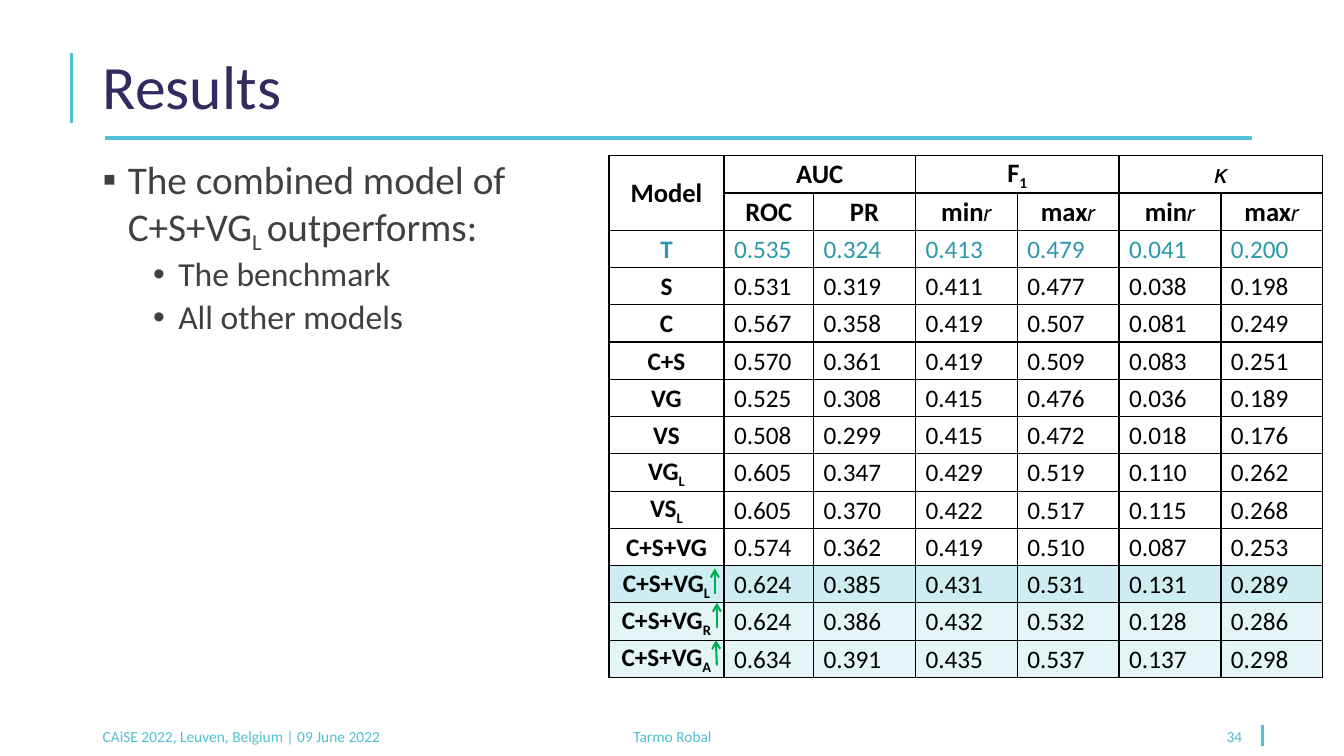
from pptx import Presentation
from pptx.dml.color import RGBColor
from pptx.enum.shapes import MSO_CONNECTOR
from pptx.enum.text import MSO_ANCHOR, PP_ALIGN
from pptx.oxml.ns import qn
from pptx.util import Pt
from lxml.etree import SubElement

PX = 9144  # 100 px to the inch
FONT = "Calibri"
BLACK = RGBColor(0x00, 0x00, 0x00)
GREY = RGBColor(0x40, 0x40, 0x40)
NAVY = RGBColor(0x33, 0x2B, 0x60)
AQUA = RGBColor(0x4F, 0xBF, 0xD3)
TEAL = RGBColor(0x2B, 0x99, 0xAB)
GREEN = RGBColor(0x00, 0xB0, 0x50)

LEFT, MID, RIGHT = PP_ALIGN.LEFT, PP_ALIGN.CENTER, PP_ALIGN.RIGHT
WIDTHS = [114, 89] + [101] * 5
ROW = 37
GROUPS = ["AUC", "F_1", "𝜅"]
HEADS = ["ROC", "PR"] + ["min", "max"] * 2
SCORES = [
    ("T", "0.535 0.324 0.413 0.479 0.041 0.200"),
    ("S", "0.531 0.319 0.411 0.477 0.038 0.198"),
    ("C", "0.567 0.358 0.419 0.507 0.081 0.249"),
    ("C+S", "0.570 0.361 0.419 0.509 0.083 0.251"),
    ("VG", "0.525 0.308 0.415 0.476 0.036 0.189"),
    ("VS", "0.508 0.299 0.415 0.472 0.018 0.176"),
    ("VG_L", "0.605 0.347 0.429 0.519 0.110 0.262"),
    ("VS_L", "0.605 0.370 0.422 0.517 0.115 0.268"),
    ("C+S+VG", "0.574 0.362 0.419 0.510 0.087 0.253"),
    ("C+S+VG_L", "0.624 0.385 0.431 0.531 0.131 0.289"),
    ("C+S+VG_R", "0.624 0.386 0.432 0.532 0.128 0.286"),
    ("C+S+VG_A", "0.634 0.391 0.435 0.537 0.137 0.298"),
]
TINTS = {"C+S+VG_L": 28, "C+S+VG_R": 15, "C+S+VG_A": 15}


def write(par, text, size, color=BLACK, bold=False, align=LEFT, lead=None, before=0):
    """Add text to a paragraph; underscores switch subscript on and off."""
    par.alignment = align
    par.space_before = Pt(before)
    if lead:
        par.line_spacing = lead
    for i, part in enumerate(text.split("_")):
        run = par.add_run()
        run.text = part
        font = run.font
        font.name, font.size, font.bold = FONT, Pt(size), bold
        font.color.rgb = color
        if i % 2:
            run._r.get_or_add_rPr().set("baseline", "-25000")


def line(slide, x1, y1, x2, y2, color=AQUA, width=2.25, arrow=False):
    rule = slide.shapes.add_connector(
        MSO_CONNECTOR.STRAIGHT, *(v * PX for v in (x1, y1, x2, y2)))
    rule.line.color.rgb = color
    rule.line.width = Pt(width)
    if arrow:
        SubElement(rule.line._get_or_add_ln(), qn("a:tailEnd"), type="arrow")
    SubElement(rule._element.spPr, qn("a:effectLst"))


def box(slide, x, y, w, h, anchor=MSO_ANCHOR.MIDDLE):
    frame = slide.shapes.add_textbox(x * PX, y * PX, w * PX, h * PX).text_frame
    frame.word_wrap = True
    frame.vertical_anchor = anchor
    return frame


def bullet(par, mark, left):
    props = par._p.get_or_add_pPr()
    props.set("marL", str(left * PX))
    props.set("indent", str(-25 * PX))
    SubElement(props, qn("a:buFont"), typeface="Arial")
    SubElement(props, qn("a:buChar"), char=mark)


def style(cell, tint):
    """Set margins, black borders and an aqua fill of the given opacity."""
    cell.margin_top = cell.margin_bottom = 0
    cell.margin_left = cell.margin_right = 10 * PX
    cell.vertical_anchor = MSO_ANCHOR.MIDDLE
    props = cell._tc.get_or_add_tcPr()
    for side in "LRTB":
        edge = SubElement(props, qn("a:ln" + side), w=str(Pt(1)))
        fill = SubElement(edge, qn("a:solidFill"))
        SubElement(fill, qn("a:srgbClr"), val=str(BLACK))
    if not tint:
        cell.fill.background()
        return
    cell.fill.solid()
    cell.fill.fore_color.rgb = AQUA
    clr = props.find(qn("a:solidFill")).find(qn("a:srgbClr"))
    SubElement(clr, qn("a:alpha"), val=str(tint * 1000))


def scores(slide):
    count = len(SCORES) + 2
    table = slide.shapes.add_table(
        count, len(WIDTHS), 604 * PX, 154 * PX, sum(WIDTHS) * PX, count * ROW * PX).table
    table.first_row = table.horz_banding = False
    for col, width in zip(table.columns, WIDTHS):
        col.width = width * PX
    tints = [0, 0] + [TINTS.get(name, 0) for name, _ in SCORES]
    for row, tint in zip(table.rows, tints):
        row.height = ROW * PX
        for cell in row.cells:
            style(cell, tint)

    def fill(r, c, text, size=18, **form):
        par = table.cell(r, c).text_frame.paragraphs[0]
        write(par, text, size, lead=1.05, **form)

    head = dict(bold=True, align=MID)
    table.cell(0, 0).merge(table.cell(1, 0))
    fill(0, 0, "Model", 19, **head)
    for i, name in enumerate(GROUPS):
        c = 2 * i + 1
        table.cell(0, c).merge(table.cell(0, c + 1))
        fill(0, c, name, 19, **head)
    for c, name in enumerate(HEADS, 1):
        fill(1, c, name, 19, **head)
        if name in ("min", "max"):
            fill(1, c, "𝑟", 16, **head)
    for r, (name, values) in enumerate(SCORES, 2):
        color = TEAL if name == "T" else BLACK
        fill(r, 0, name, color=color, **head)
        for c, value in enumerate(values.split(), 1):
            fill(r, c, value, color=color)


def heading(slide):
    title = slide.shapes.title
    title.left, title.top, title.width, title.height = (
        v * PX for v in (92, 40, 1150, 97))
    title.text_frame.vertical_anchor = MSO_ANCHOR.MIDDLE
    write(title.text_frame.paragraphs[0], "Results", 44, NAVY, lead=0.9)


def points(slide):
    frame = box(slide, 92, 154, 500, 553, MSO_ANCHOR.TOP)
    par = frame.paragraphs[0]
    write(par, "The combined model of C+S+VG_L _outperforms:", 28, GREY, lead=0.9, before=10)
    bullet(par, "▪", 25)
    for text in ("The benchmark", "All other models"):
        par = frame.add_paragraph()
        par.level = 1
        write(par, text, 24, GREY, lead=0.9, before=5)
        bullet(par, "•", 75)


def main():
    deck = Presentation()
    deck.slide_width, deck.slide_height = 1333 * PX, 750 * PX
    slide = deck.slides.add_slide(deck.slide_layouts[5])
    for ends in ((71, 53, 71, 122), (1252, 719, 1252, 740), (104, 137, 1242, 137)):
        line(slide, *ends)
    scores(slide)
    heading(slide)
    points(slide)
    for text, x, w, align in (
            ("Tarmo Robal", 442, 450, MID),
            ("CAiSE 2022, Leuven, Belgium | 09 June 2022", 92, 331, LEFT),
            ("34", 942, 300, RIGHT)):
        write(box(slide, x, 719, w, 23).paragraphs[0], text, 11, AQUA, align=align)
    for x, y, tip in ((709, 589, 709), (711, 623, 711), (711, 660, 710)):
        line(slide, x, y, tip, y - 25, GREEN, 1.5, arrow=True)
    deck.save("out.pptx")


if __name__ == "__main__":
    main()
